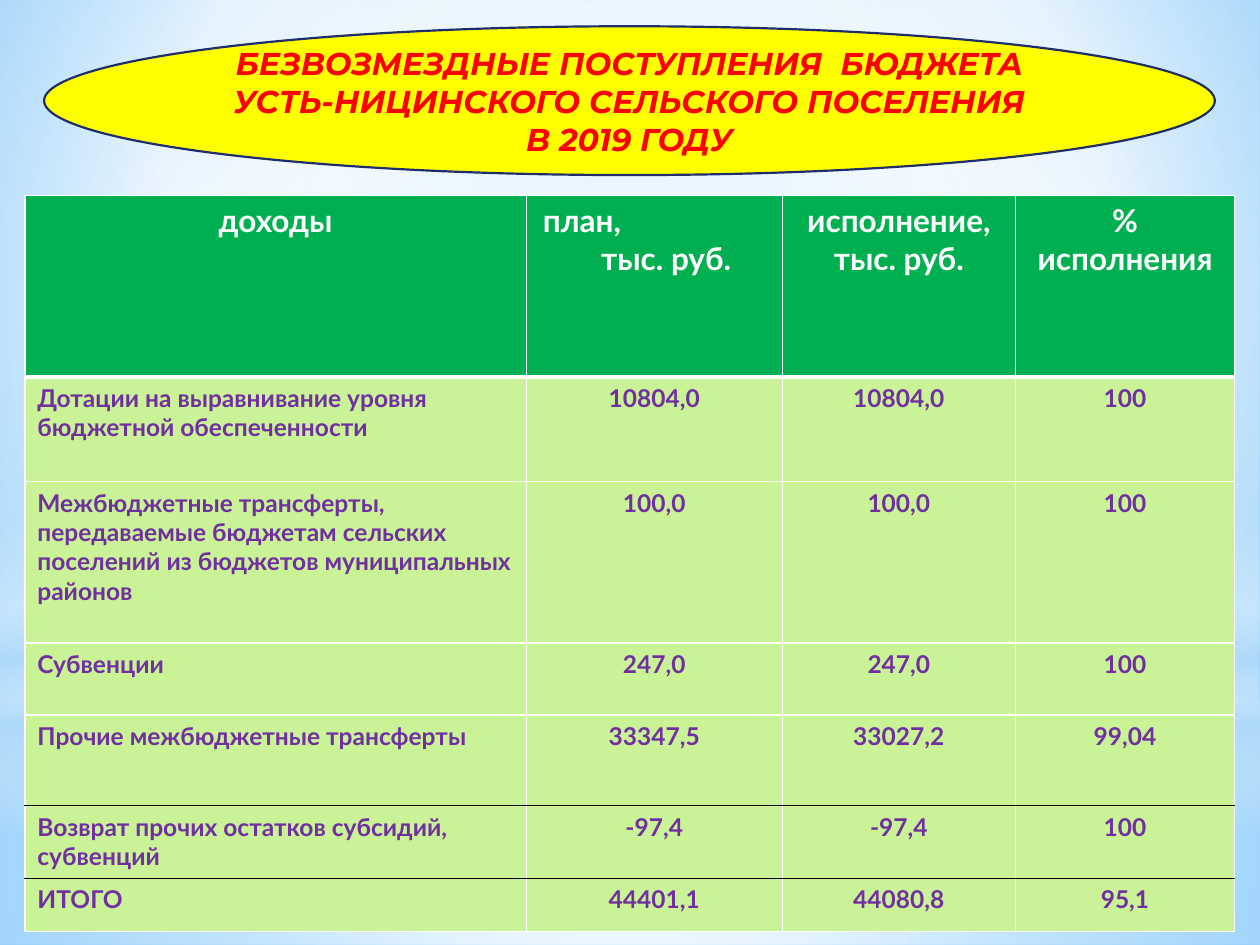
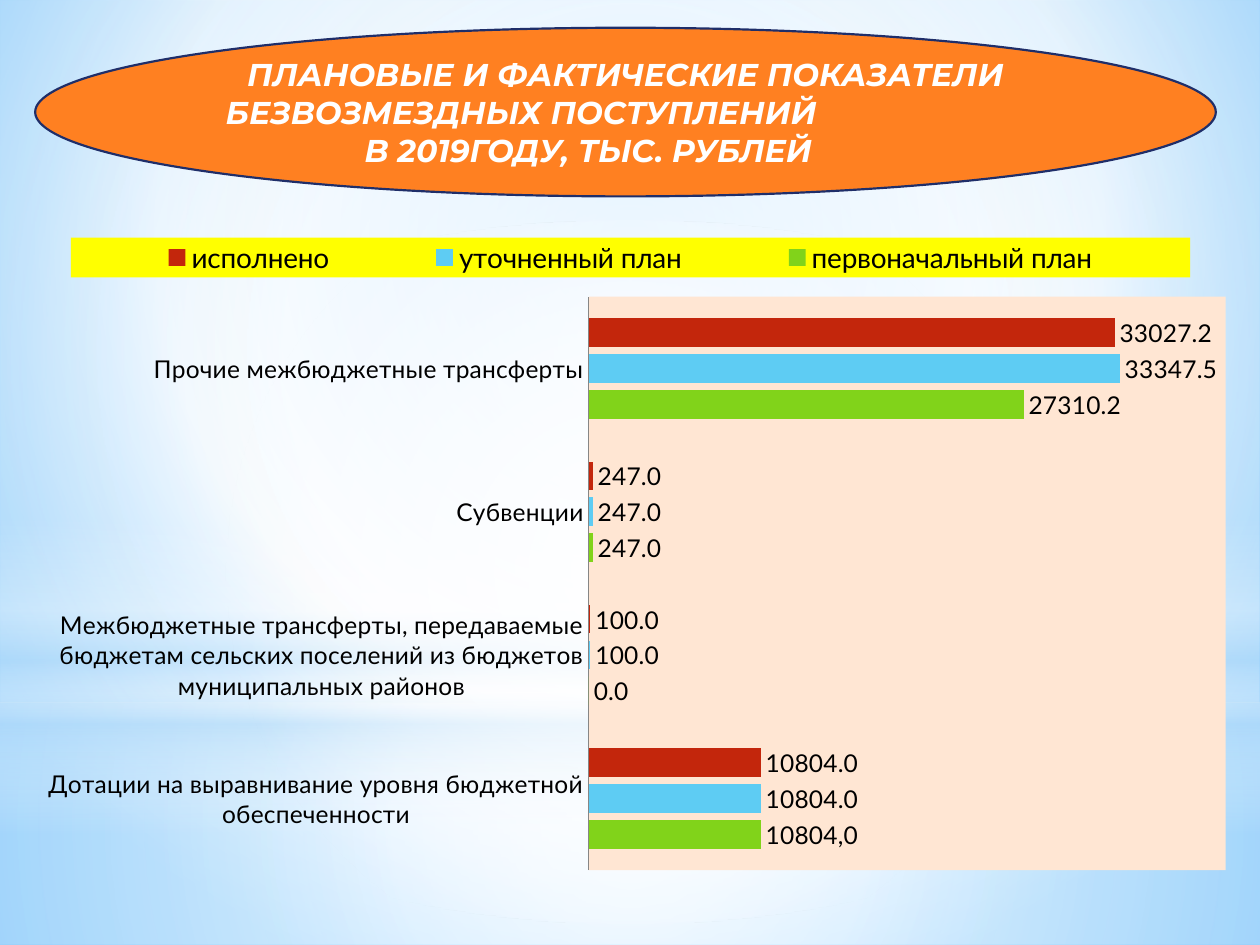
from collections import namedtuple

from pptx import Presentation
from pptx.chart.data import CategoryChartData
from pptx.dml.color import RGBColor
from pptx.enum.chart import XL_CHART_TYPE, XL_LABEL_POSITION as LabelPosition
from pptx.enum.chart import XL_LEGEND_POSITION as LegendPosition, XL_TICK_MARK as TickMark
from pptx.enum.shapes import MSO_SHAPE as Preset
from pptx.enum.text import MSO_ANCHOR as Anchor, PP_ALIGN as Align
from pptx.oxml import parse_xml
from pptx.oxml.ns import nsdecls
from pptx.util import Cm, Pt

WHITE, BLACK = RGBColor(255, 255, 255), RGBColor(0, 0, 0)
RED, YELLOW = RGBColor(255, 0, 0), RGBColor(255, 255, 0)
ORANGE, NAVY = RGBColor(0xFF, 0x80, 0x21), RGBColor(0x1F, 0x2E, 0x69)
HEADER_GREEN, CELL_GREEN = RGBColor(0, 0xB0, 0x50), RGBColor(0xCA, 0xF2, 0x97)
PURPLE, PEACH = RGBColor(0x70, 0x30, 0xA0), RGBColor(0xFF, 0xE6, 0xD3)
AXIS_GRAY, PALE_BLUE = RGBColor(0x86, 0x86, 0x86), RGBColor(0xB4, 0xDC, 0xFA)
SKY, DEEP_SKY = RGBColor(0x9E, 0xD5, 0xFF), RGBColor(0x5B, 0xB9, 0xFF)
BAR_GREEN, BAR_BLUE = RGBColor(0x81, 0xD3, 0x1A), RGBColor(0x5E, 0xCC, 0xF3)
BAR_RED = RGBColor(0xC3, 0x26, 0x0C)

BODY_FONT = "Lato"
TITLE_FORMAT = {"name": "Montserrat", "size": Pt(18), "bold": True, "italic": True}
HEADER_FORMAT = {"name": BODY_FONT, "size": Pt(18), "bold": True}
CELL_FORMAT = {"name": BODY_FONT, "size": Pt(14), "bold": True}

# One paragraph; left and right are indents in centimetres
Line = namedtuple("Line", "text align left right", defaults=(Align.CENTER, 0, 0))

# Soft light on the master: preset, box in cm, stops (position, colour, alpha), direction
CENTRE = '<a:path path="circle"><a:fillToRect l="50000" t="50000" r="50000" b="50000"/></a:path>'
DOWN = '<a:lin ang="5400000" scaled="0"/>'
PAGE_FOCUS = '<a:path path="circle"><a:fillToRect l="20000" t="10000" r="20000" b="60000"/></a:path>'
PAGE_STOPS = [(0, SKY, 100), (60, WHITE, 100), (100, DEEP_SKY, 100)]
GLOWS = [
    (Preset.RECTANGLE, (0, 14.17, 25.4, 4.88),
     [(0, WHITE, 91), (37, WHITE, 76), (100, PALE_BLUE, 79)], CENTRE),
    (Preset.RECTANGLE, (0, 0, 25.4, 14.17),
     [(0, WHITE, 89), (48, WHITE, 62), (100, PALE_BLUE, 79)], CENTRE),
    (Preset.RECTANGLE, (0, 10.46, 25.4, 6.35),
     [(0, WHITE, 0), (29, WHITE, 30), (45, PALE_BLUE, 40),
      (55, WHITE, 26), (65, PALE_BLUE, 60), (100, WHITE, 0)], DOWN),
    (Preset.OVAL, (0, 4.45, 25.4, 14.17), [(0, WHITE, 100), (56, WHITE, 0)], CENTRE),
]

COLUMN_WIDTHS = [10.11, 5.16, 4.7, 4.42]
ROW_HEIGHTS = [3.66, 2.11, 3.25, 1.45, 1.83, 1.47, 1.07]
GRANTS = "Дотации на выравнивание уровня бюджетной обеспеченности"
TRANSFERS = ("Межбюджетные трансферты, передаваемые бюджетам сельских поселений "
             "из бюджетов муниципальных районов")
SUBVENTIONS = "Субвенции"
OTHER = "Прочие межбюджетные трансферты"
HEADERS = [
    [Line("доходы")],
    [Line("план,", Align.LEFT, 0.08), Line("тыс. руб.", Align.CENTER, 0.48)],
    [Line("исполнение, тыс. руб.")],
    [Line("% исполнения")],
]
INCOME_ROWS = [
    (GRANTS, "10804,0", "10804,0", "100"),
    (TRANSFERS, "100,0", "100,0", "100"),
    (SUBVENTIONS, "247,0", "247,0", "100"),
    (OTHER, "33347,5", "33027,2", "99,04"),
    ("Возврат прочих остатков субсидий, субвенций", "-97,4", "-97,4", "100"),
    ("ИТОГО", "44401,1", "44080,8", "95,1"),
]
# Borders between rows that differ from thin white: rows above -> (colour, points)
RULES = {1: (WHITE, 3), 5: (BLACK, 1), 6: (BLACK, 1)}

CATEGORIES = [GRANTS, TRANSFERS, SUBVENTIONS, OTHER]
SERIES = [
    ("первоначальный план", (10804, 0, 247, 27310.2), BAR_GREEN),
    ("уточненный план", (10804, 100, 247, 33347.5), BAR_BLUE),
    ("исполнено", (10804, 100, 247, 33027.2), BAR_RED),
]


def to_cm(box):
    return [Cm(length) for length in box]


def apply_format(font, values, color):
    for name, value in values.items():
        setattr(font, name, value)
    font.color.rgb = color


def write_lines(text_frame, lines, values, color):
    for index, line in enumerate(lines):
        paragraph = text_frame.add_paragraph() if index else text_frame.paragraphs[0]
        paragraph.alignment = line.align
        properties = paragraph._p.get_or_add_pPr()
        for side, indent in (("marL", line.left), ("marR", line.right)):
            if indent:
                properties.set(side, str(Cm(indent)))
        run = paragraph.add_run()
        run.text = line.text
        apply_format(run.font, values, color)


def make_gradient(solid_fill, stops, direction):
    """Swap a solid fill element for a gradient."""
    stop_xml = "".join(
        f'<a:gs pos="{position * 1000}"><a:srgbClr val="{color}">'
        f'<a:alpha val="{alpha * 1000}"/></a:srgbClr></a:gs>'
        for position, color, alpha in stops)
    gradient = parse_xml(f'<a:gradFill {nsdecls("a")} rotWithShape="1">'
                         f'<a:gsLst>{stop_xml}</a:gsLst>{direction}</a:gradFill>')
    solid_fill.getparent().replace(solid_fill, gradient)


def decorate_master(master, slide):
    """Build the glows on a slide, then move them to the master."""
    master.background.fill.solid()
    make_gradient(master.element.xpath(".//p:bgPr/a:solidFill")[0], PAGE_STOPS, PAGE_FOCUS)
    for number, (preset, box, stops, direction) in enumerate(GLOWS):
        shape = slide.shapes.add_shape(preset, *to_cm(box))
        shape.shadow.inherit = False
        shape.line.fill.background()
        shape.fill.solid()
        make_gradient(shape.element.xpath("p:spPr/a:solidFill")[0], stops, direction)
        shape.element.xpath("p:nvSpPr/p:cNvPr")[0].set("id", str(100 + number))
        master.shapes.element.append(shape.element)


def add_title(slide, box, lines, fill_color, text_color):
    shape = slide.shapes.add_shape(Preset.OVAL, *to_cm(box))
    shape.shadow.inherit = False
    shape.fill.solid()
    shape.fill.fore_color.rgb = fill_color
    shape.line.color.rgb = NAVY
    shape.line.width = Pt(1.25)
    shape.text_frame.word_wrap = True
    shape.text_frame.vertical_anchor = Anchor.MIDDLE
    write_lines(shape.text_frame, lines, TITLE_FORMAT, text_color)


def style_cell(cell, row, fill_color):
    thin = (WHITE, 1)
    borders = {"L": thin, "R": thin, "T": RULES.get(row, thin), "B": RULES.get(row + 1, thin)}
    properties = cell._tc.get_or_add_tcPr()
    for side, (color, points) in borders.items():
        properties.append(parse_xml(
            f'<a:ln{side} {nsdecls("a")} w="{Pt(points)}"><a:solidFill>'
            f'<a:srgbClr val="{color}"/></a:solidFill></a:ln{side}>'))
    cell.fill.solid()
    cell.fill.fore_color.rgb = fill_color


def add_income_table(slide, left, top):
    frame = slide.shapes.add_table(len(ROW_HEIGHTS), len(COLUMN_WIDTHS), *to_cm(
        (left, top, sum(COLUMN_WIDTHS), sum(ROW_HEIGHTS))))
    table = frame.table
    table.first_row = table.horz_banding = False
    for column, width in zip(table.columns, COLUMN_WIDTHS):
        column.width = Cm(width)
    for row, height in zip(table.rows, ROW_HEIGHTS):
        row.height = Cm(height)

    for column, lines in enumerate(HEADERS):
        cell = table.cell(0, column)
        style_cell(cell, 0, HEADER_GREEN)
        write_lines(cell.text_frame, lines, HEADER_FORMAT, WHITE)
    for row, values in enumerate(INCOME_ROWS, 1):
        for column, text in enumerate(values):
            cell = table.cell(row, column)
            style_cell(cell, row, CELL_GREEN)
            align = Align.CENTER if column else Align.LEFT
            write_lines(cell.text_frame, [Line(text, align)], CELL_FORMAT, PURPLE)


def chart_layout(x, y, width, height, inner=False):
    target = '<c:layoutTarget val="inner"/>' if inner else ""
    sizes = "".join(f'<c:{tag} val="{value}"/>' for tag, value in
                    (("x", x), ("y", y), ("w", width), ("h", height)))
    return parse_xml(f'<c:layout {nsdecls("c")}><c:manualLayout>{target}<c:xMode val="edge"/>'
                     f'<c:yMode val="edge"/>{sizes}</c:manualLayout></c:layout>')


def chart_fill(color):
    return parse_xml(f'<c:spPr {nsdecls("c", "a")}><a:solidFill><a:srgbClr val="{color}"/>'
                     '</a:solidFill><a:ln><a:noFill/></a:ln></c:spPr>')


def add_plan_chart(slide, box):
    data = CategoryChartData(number_format="0.0")
    data.categories = CATEGORIES
    for name, values, _ in SERIES:
        data.add_series(name, values)
    chart = slide.shapes.add_chart(XL_CHART_TYPE.BAR_CLUSTERED, *to_cm(box), data).chart
    chart.has_title = False
    apply_format(chart.font, {"name": BODY_FONT, "size": Pt(14)}, BLACK)

    # Axes
    value_axis, category_axis = chart.value_axis, chart.category_axis
    value_axis.minimum_scale, value_axis.maximum_scale = 0, 40000
    value_axis.has_major_gridlines = False
    value_axis.visible = False
    category_axis.major_tick_mark = TickMark.NONE
    category_axis.format.line.color.rgb = AXIS_GRAY

    # Bars and labels
    plot = chart.plots[0]
    plot.gap_width, plot.overlap, plot.vary_by_categories = 150, -25, False
    for series, (_, _, color) in zip(plot.series, SERIES):
        series.format.fill.solid()
        series.format.fill.fore_color.rgb = color
        labels = series.data_labels
        labels.show_value = True
        labels.number_format, labels.number_format_is_linked = "0.0", False
        labels.position = LabelPosition.OUTSIDE_END
    grants_label = plot.series[0].points[0].data_label
    grants_label.text_frame.text = "10804,0"
    grants_label.position = LabelPosition.OUTSIDE_END

    # Legend band
    chart.has_legend = True
    chart.legend.position = LegendPosition.TOP
    chart.legend.include_in_layout = False
    apply_format(chart.legend.font, {"name": BODY_FONT, "size": Pt(16)}, BLACK)
    legend = chart.element.xpath(".//c:legend")[0]
    for old_layout in legend.xpath("c:layout"):
        legend.remove(old_layout)
    legend.xpath("c:overlay")[0].addprevious(chart_layout(0.03, 0.02, 0.94, 0.06))
    legend.xpath("c:txPr")[0].addprevious(chart_fill(YELLOW))

    # Plot area
    plot_area = chart.element.xpath(".//c:plotArea")[0]
    for old_layout in plot_area.xpath("c:layout"):
        plot_area.remove(old_layout)
    plot_area.insert(0, chart_layout(0.465, 0.109, 0.535, 0.862, inner=True))
    plot_area.append(chart_fill(PEACH))


def main():
    presentation = Presentation()
    presentation.slide_width, presentation.slide_height = Cm(25.4), Cm(19.05)
    blank = presentation.slide_layouts[6]

    # Income table
    slide = presentation.slides.add_slide(blank)
    decorate_master(presentation.slide_master, slide)
    add_income_table(slide, 0.5, 3.94)
    add_title(slide, (0.89, 0.53, 23.6, 3), [
        Line("БЕЗВОЗМЕЗДНЫЕ ПОСТУПЛЕНИЯ  БЮДЖЕТА УСТЬ-НИЦИНСКОГО "
             "СЕЛЬСКОГО ПОСЕЛЕНИЯ В 2019 ГОДУ")], YELLOW, RED)

    # Plan and actual chart
    slide = presentation.slides.add_slide(blank)
    add_plan_chart(slide, (0.71, 4.52, 24, 13.41))
    add_title(slide, (0.71, 0.56, 23.8, 3.4), [
        Line("ПЛАНОВЫЕ И ФАКТИЧЕСКИЕ ПОКАЗАТЕЛИ"),
        Line("БЕЗВОЗМЕЗДНЫХ ПОСТУПЛЕНИЙ", right=4.2),
        Line("В 2019ГОДУ, ТЫС. РУБЛЕЙ", left=2.7)], ORANGE, WHITE)

    presentation.save("out.pptx")


if __name__ == "__main__":
    main()
